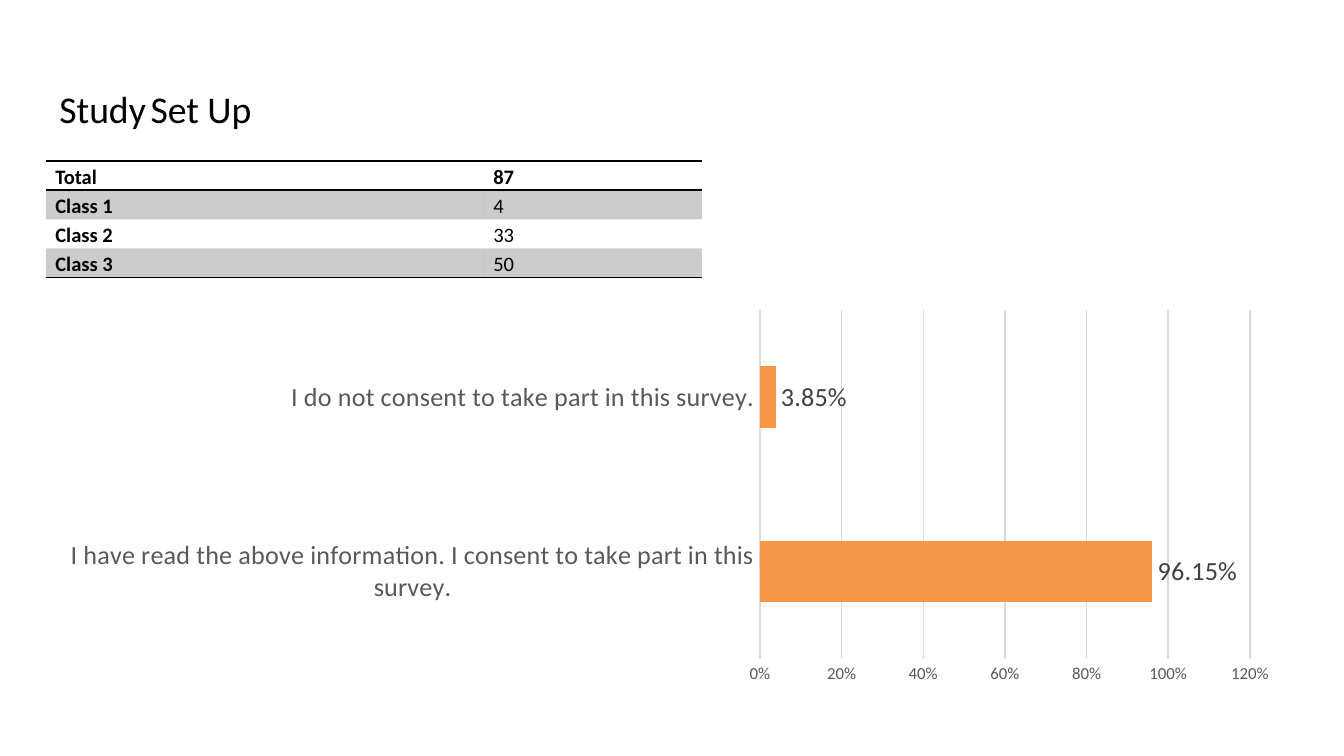
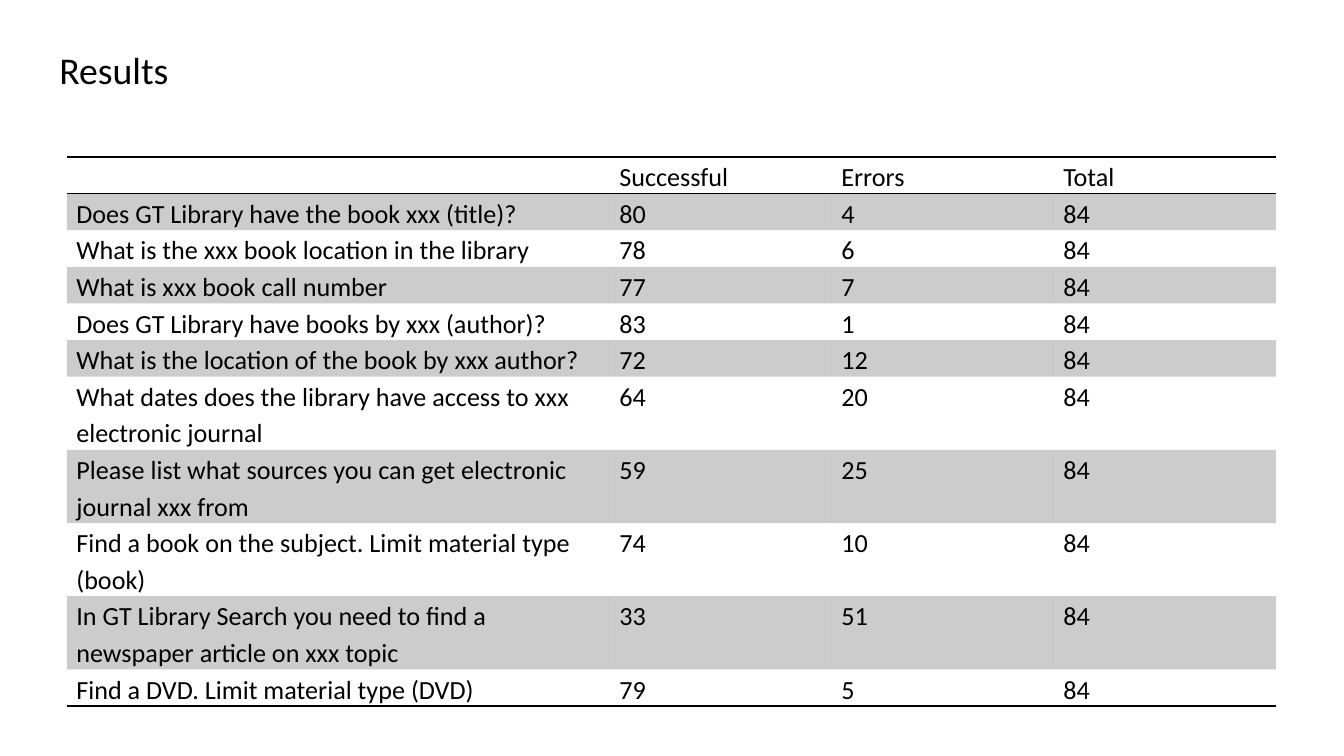
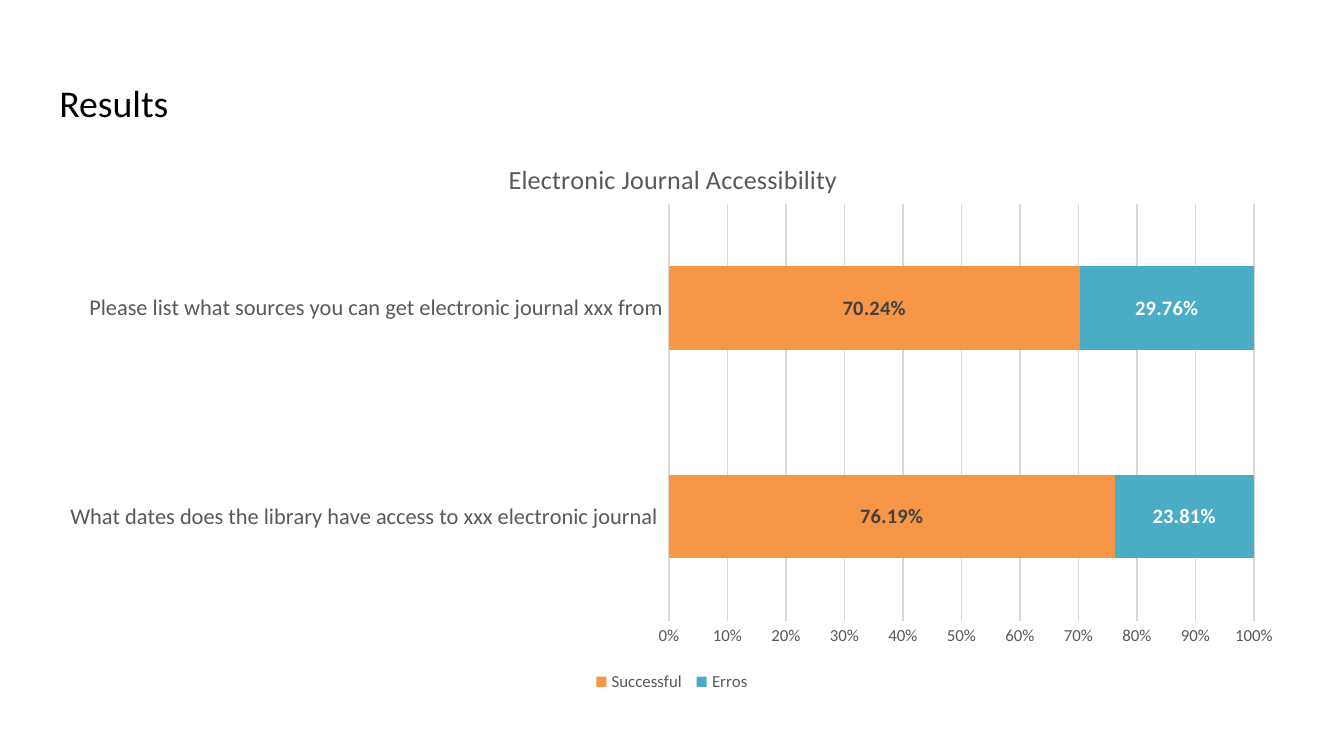
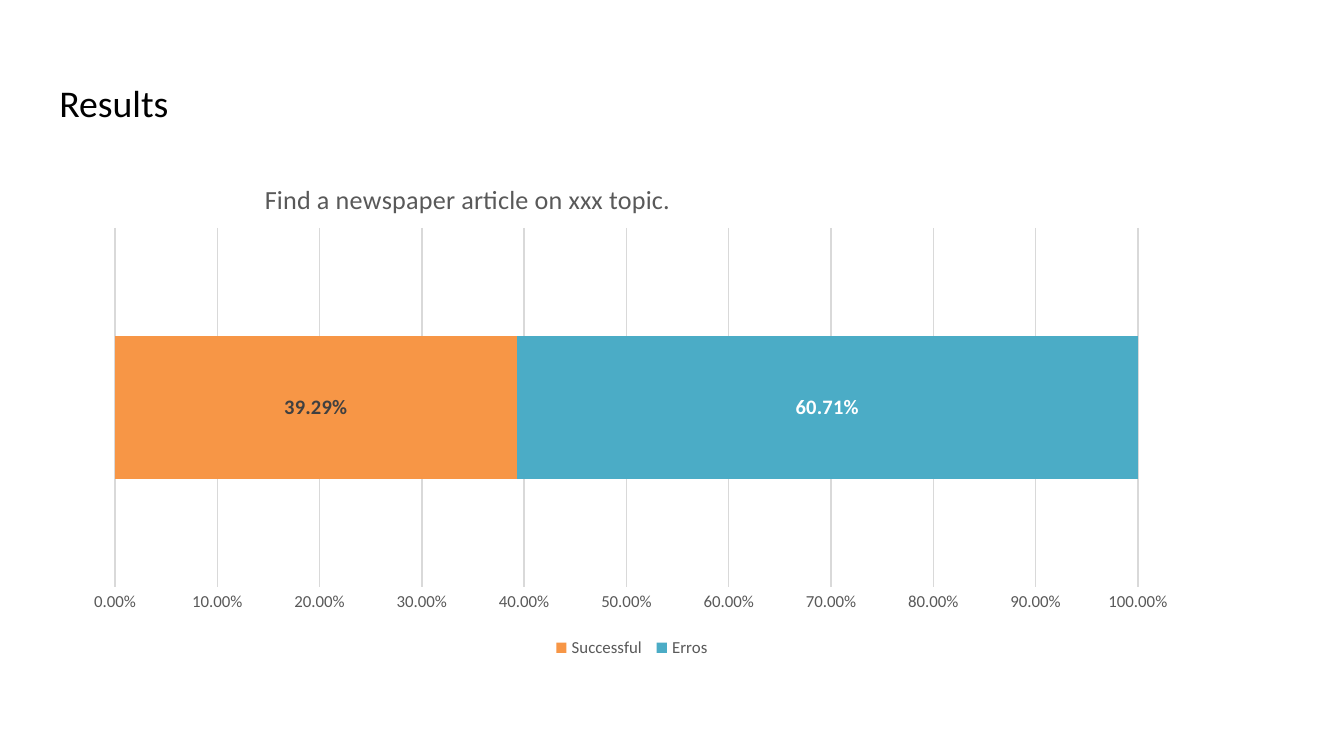
from lxml import etree
from pptx import Presentation
from pptx import util as u
from pptx.chart.data import CategoryChartData
from pptx.dml.color import RGBColor
from pptx.enum import chart as ch, text
from pptx.oxml.ns import qn

# Shared look
EMU_PER_PX = 914400 / 134.4
FONT = "Calibri"
BLACK = RGBColor(0x00, 0x00, 0x00)
WHITE = RGBColor(0xFF, 0xFF, 0xFF)
DARK = RGBColor(0x40, 0x40, 0x40)
GREY = RGBColor(0x59, 0x59, 0x59)
RULE = RGBColor(0xD9, 0xD9, 0xD9)
ORANGE = RGBColor(0xF7, 0x96, 0x46)
TEAL = RGBColor(0x4B, 0xAC, 0xC6)
TITLE_SIZE = 20.2
NO_TABLE_STYLE = "{2D5ABB26-0587-4C30-8999-92F81FD0307C}"

# Content: boxes are (left, top, width, height) in px
CLASSES = [
    ("Total", "87"),
    ("Class 1", "4"),
    ("Class 2", "33"),
    ("Class 3", "50"),
]
TASKS = [
    ("", "Successful", "Errors", "Total"),
    ("Does GT Library have the book xxx (title)?", "80", "4", "84"),
    ("What is the xxx book location in the library", "78", "6", "84"),
    ("What is xxx book call number", "77", "7", "84"),
    ("Does GT Library have books by xxx (author)?", "83", "1", "84"),
    ("What is the location of the book by xxx author?", "72", "12", "84"),
    ("What dates does the library have access to xxx electronic journal", "64", "20", "84"),
    ("Please list what sources you can get electronic journal xxx from", "59", "25", "84"),
    ("Find a book on the subject. Limit material type (book)", "74", "10", "84"),
    ("In GT Library Search you need to find a newspaper article on xxx topic", "33", "51", "84"),
    ("Find a DVD. Limit material type (DVD)", "79", "5", "84"),
]
CONSENT = dict(
    box=(46, 302, 1247, 388), plot=(760, 310, 490, 349),
    cats=["I have read the above information. I consent to take part in this survey.",
          "I do not consent to take part in this survey."],
    series=[("Series 1", (0.9615, 0.0385), ORANGE, DARK)],
    gap=182, cat_size=14, label_size=14, top_value=1.2, step=0.2)
JOURNALS = dict(
    box=(46, 129, 1252, 568), plot=(669, 204, 585, 417),
    title="Electronic Journal Accessibility", title_at=(504, 156),
    cats=["What dates does the library have access to xxx electronic journal ",
          "Please list what sources you can get electronic journal xxx from"],
    series=[("Successful ", (0.7619, 0.7024), ORANGE, DARK),
            ("Erros", (0.2381, 0.2976), TEAL, WHITE)],
    stacked=True, cat_size=12)
NEWSPAPER = dict(
    box=(73, 155, 1118, 508), plot=(115, 228, 1023, 359),
    title="Find a newspaper article on xxx topic.", title_at=(260, 176),
    cats=["1"],
    series=[("Successful ", (0.3929,), ORANGE, DARK),
            ("Erros", (0.6071,), TEAL, WHITE)],
    stacked=True, axis_format="0.00%")


def px(n):
    return u.Emu(round(n * EMU_PER_PX))


def style(font, size, color=BLACK, bold=False):
    font.name, font.size, font.bold = FONT, u.Pt(size), bold
    font.color.rgb = color


def write(p, words, size, color=BLACK, bold=False, spacing=None, after=None):
    """Add one run to a paragraph; empty words only set the line's size."""
    if spacing:
        p.line_spacing = spacing
    if after is not None:
        p.space_after = u.Pt(after)
    if words:
        r = p.add_run()
        r.text = words
        style(r.font, size, color, bold)
    else:
        etree.SubElement(p._p, qn("a:endParaRPr"), sz=str(size * 100))


def add_slide(prs, runs, top=66, spacing=None):
    s = prs.slides.add_slide(prs.slide_layouts[5])
    sp = s.shapes.title
    sp.left, sp.top, sp.width, sp.height = map(px, (46, top, 1252, 85))
    tf = sp.text_frame
    tf.word_wrap, tf.auto_size = True, text.MSO_AUTO_SIZE.NONE
    tf.vertical_anchor = text.MSO_ANCHOR.TOP
    tf.margin_left = tf.margin_right = tf.margin_top = tf.margin_bottom = u.Inches(0.1)
    p = tf.paragraphs[0]
    p.alignment = text.PP_ALIGN.LEFT
    for words, size in runs:
        write(p, words, size, spacing=spacing)
    return s


# Tables
def add_border(cell, side):
    ln = etree.SubElement(cell._tc.get_or_add_tcPr(), qn("a:" + side), w=str(u.Pt(1)))
    fill = etree.SubElement(ln, qn("a:solidFill"))
    etree.SubElement(fill, qn("a:srgbClr"), val=str(BLACK))


def shade(cell):
    cell.fill.solid()
    cell.fill.fore_color.rgb = BLACK
    color = cell._tc.tcPr.find(qn("a:solidFill")).find(qn("a:srgbClr"))
    etree.SubElement(color, qn("a:alpha"), val="20000")


def add_table(s, rows, left, top, widths, row_height, size, bold_heads=False, after=None):
    frame = s.shapes.add_table(len(rows), len(widths), px(left), px(top),
                               px(sum(widths)), px(row_height * len(rows)))
    table = frame.table
    table.first_row = table.horz_banding = False
    table._tbl.tblPr.find(qn("a:tableStyleId")).text = NO_TABLE_STYLE
    for column, width in zip(table.columns, widths):
        column.width = px(width)
    for i, row in enumerate(rows):
        table.rows[i].height = px(row_height)
        for j, words in enumerate(row):
            cell = table.cell(i, j)
            cell.margin_left = cell.margin_right = u.Inches(0.07)
            cell.margin_top = cell.margin_bottom = 0
            write(cell.text_frame.paragraphs[0], words, size, spacing=1.15,
                  bold=bold_heads and (i == 0 or j == 0), after=after)
            if i == 0:
                add_border(cell, "lnT")
            if i in (0, len(rows) - 1):
                add_border(cell, "lnB")
            if i % 2:
                shade(cell)
            else:
                cell.fill.background()


# Charts
def place(parent, box, frame, index, inner=False):
    """Fix a chart part at a px box, given as fractions of the chart frame."""
    for old in parent.findall(qn("c:layout")):
        parent.remove(old)
    layout = etree.Element(qn("c:layout"))
    parent.insert(index, layout)
    manual = etree.SubElement(layout, qn("c:manualLayout"))
    values = [("xMode", "edge"), ("yMode", "edge")]
    if inner:
        values.insert(0, ("layoutTarget", "inner"))
    left, top, width, height = frame
    fractions = [(box[0] - left) / width, (box[1] - top) / height]
    fractions += [n / whole for n, whole in zip(box[2:], (width, height))]
    values += [(tag, f"{f:.4f}") for tag, f in zip("xywh", fractions)]
    for tag, val in values:
        etree.SubElement(manual, qn("c:" + tag), val=val)


def grey_line(line):
    line.color.rgb = RULE
    line.width = u.Pt(0.75)


def add_chart(s, box, plot, cats, series, title=None, title_at=None, stacked=False,
              gap=150, cat_size=None, label_size=11, top_value=1, step=0.1,
              axis_format="0%"):
    data = CategoryChartData(number_format="0.00%")
    data.categories = cats
    for name, values, *_ in series:
        data.add_series(name, values)
    kind = ch.XL_CHART_TYPE.BAR_STACKED if stacked else ch.XL_CHART_TYPE.BAR_CLUSTERED
    chart = s.shapes.add_chart(kind, *map(px, box), data).chart
    style(chart.font, 10)

    # Title and legend
    chart.has_title = bool(title)
    if title:
        write(chart.chart_title.text_frame.paragraphs[0], title, 14, GREY)
        place(chart.chart_title._element, title_at, box, 1)
    chart.has_legend = stacked
    if stacked:
        chart.legend.position = ch.XL_LEGEND_POSITION.BOTTOM
        chart.legend.include_in_layout = False
        style(chart.legend.font, 9, GREY)

    # Axes
    cat, val = chart.category_axis, chart.value_axis
    for axis in (cat, val):
        axis.major_tick_mark = axis.minor_tick_mark = ch.XL_TICK_MARK.NONE
    cat.has_major_gridlines = False
    cat.visible = cat_size is not None
    if cat_size:
        style(cat.tick_labels.font, cat_size, GREY)
        grey_line(cat.format.line)
    val.minimum_scale, val.maximum_scale, val.major_unit = 0, top_value, step
    val.has_major_gridlines = True
    grey_line(val.major_gridlines.format.line)
    val.format.line.fill.background()
    style(val.tick_labels.font, 9, GREY)
    val.tick_labels.number_format = axis_format
    val.tick_labels.number_format_is_linked = False

    # Bars and their labels
    bars = chart.plots[0]
    bars.vary_by_categories = False
    bars.gap_width = gap
    bars.overlap = 100 if stacked else 0
    position = ch.XL_LABEL_POSITION.CENTER if stacked else ch.XL_LABEL_POSITION.OUTSIDE_END
    for ser, (_, _, color, label_color) in zip(bars.series, series):
        ser.format.fill.solid()
        ser.format.fill.fore_color.rgb = color
        labels = ser.data_labels
        labels.show_value = True
        labels.number_format, labels.number_format_is_linked = "0.00%", False
        labels.position = position
        style(labels.font, label_size, label_color, bold=stacked)
    place(chart._chartSpace.chart.plotArea, plot, box, 0, inner=True)


def main():
    prs = Presentation()
    prs.slide_width, prs.slide_height = px(1344), px(756)
    results = [("Results", TITLE_SIZE)]

    # Study set up
    s = add_slide(prs, [("Study", TITLE_SIZE), (" ", 11), ("Set Up", TITLE_SIZE)], spacing=1.15)
    add_table(s, CLASSES, 46, 161, (438, 218), 28, 11, bold_heads=True)
    add_chart(s, **CONSENT)

    # Results by task
    s = add_slide(prs, results, top=27, spacing=1.15)
    add_table(s, TASKS, 67, 157, (543, 222, 222, 222), 27, 14, after=10)

    # Results in charts
    for chart in (JOURNALS, NEWSPAPER):
        add_chart(add_slide(prs, results), **chart)

    prs.save("out.pptx")


if __name__ == "__main__":
    main()
